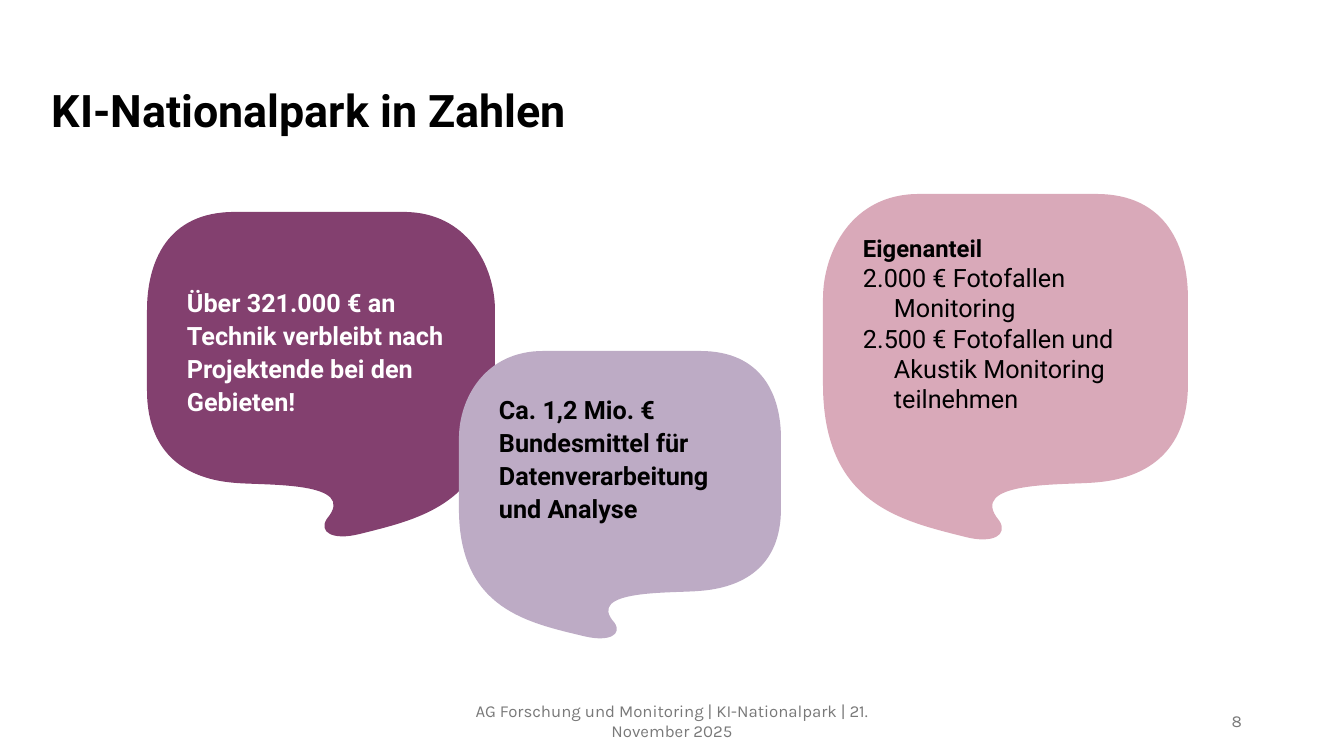
from lxml.etree import SubElement
from pptx import Presentation
from pptx.dml.color import RGBColor
from pptx.enum.text import MSO_ANCHOR, PP_ALIGN
from pptx.oxml.ns import qn
from pptx.util import Pt

PX = 914400 / 100.8
INDENT = 31

# Speech bubble with its tail at the lower left, in thousandths of its width and height
BUBBLE_OUTLINE = [
    ("a:moveTo", [(0, 550)]),
    ("a:cubicBezTo", [(0, 380), (0, 304), (0, 304)]),
    ("a:cubicBezTo", [(0, 167), (80, 0), (262, 0)]),
    ("a:lnTo", [(749, 0)]),
    ("a:cubicBezTo", [(942, 0), (1000, 155), (1000, 304)]),
    ("a:lnTo", [(1000, 550)]),
    ("a:cubicBezTo", [(1000, 757), (876, 825), (749, 836)]),
    ("a:cubicBezTo", [(660, 845), (390, 830), (483, 947)]),
    ("a:cubicBezTo", [(508, 988), (467, 1015), (389, 994)]),
    ("a:cubicBezTo", [(215, 947), (0, 900), (0, 550)]),
    ("a:close", []),
]


def px(length):
    return round(length * PX)


def rgb(color):
    return RGBColor.from_string(color)


presentation = Presentation()
presentation.slide_width = px(1344)
presentation.slide_height = px(756)
slide = presentation.slides.add_slide(presentation.slide_layouts[6])

TOP, MIDDLE, BOTTOM = MSO_ANCHOR.TOP, MSO_ANCHOR.MIDDLE, MSO_ANCHOR.BOTTOM
LEFT, CENTER, RIGHT = PP_ALIGN.LEFT, PP_ALIGN.CENTER, PP_ALIGN.RIGHT

# Box, bubble fill, tail at the right, anchor, alignment, line spacing, hanging indent,
# font, text colour, and paragraphs of text, size and bold
parts = [
    ((42, 40, 1026, 146), None, False, MIDDLE, LEFT, 0.9, 0, "Roboto", "000000",
     [("KI-Nationalpark in Zahlen", 32, True)]),
    ((147, 212, 348, 324), "83406F", True, BOTTOM, LEFT, 1.1, 0, "Roboto", "FFFFFF",
     [("Über 321.000 € an Technik verbleibt nach Projektende bei den Gebieten!", 18, True)]),
    ((950, 701, 302, 40), None, False, MIDDLE, RIGHT, 1.0, 0, "Karla", "797979",
     [("8", 12, False)]),
    ((445, 701, 454, 40), None, False, MIDDLE, CENTER, 1.0, 0, "Karla", "797979",
     [("AG Forschung und Monitoring | KI-Nationalpark | 21. November 2025", 12, False)]),
    ((459, 351, 322, 287), "BDABC5", False, TOP, LEFT, 1.1, 0, "Roboto", "000000",
     [("Ca. 1,2 Mio. € Bundesmittel für Datenverarbeitung und Analyse", 18, True)]),
    ((823, 194, 365, 345), "D9A9B9", False, TOP, LEFT, 1.0, INDENT, "Roboto", "000000",
     [("Eigenanteil", 17, True),
      ("2.000 € Fotofallen Monitoring", 18, False),
      ("2.500 € Fotofallen und Akustik Monitoring teilnehmen", 18, False)]),
]
for (box, fill, mirrored, anchor, alignment, line_spacing, indent,
     font_name, color, paragraphs) in parts:
    left, top, width, height = map(px, box)
    if fill:
        builder = slide.shapes.build_freeform(left, top)
        builder.add_line_segments([(left + width, top + height)])
        shape = builder.convert_to_shape()
        outline = next(shape._element.iter(qn("a:path")))
        for command in list(outline):
            outline.remove(command)
        outline.set("w", "1000")
        outline.set("h", "1000")
        for tag, points in BUBBLE_OUTLINE:
            command = SubElement(outline, qn(tag))
            for x, y in points:
                SubElement(command, qn("a:pt"), x=str(1000 - x if mirrored else x), y=str(y))
        shape.shadow.inherit = False
        shape.fill.solid()
        shape.fill.fore_color.rgb = rgb(fill)
        shape.line.fill.background()
    else:
        shape = slide.shapes.add_textbox(left, top, width, height)

    text_frame = shape.text_frame
    text_frame.word_wrap = True
    text_frame.vertical_anchor = anchor
    if fill:
        text_frame.margin_left = text_frame.margin_right = text_frame.margin_top = px(40)
        text_frame.margin_bottom = px(119)
    text_frame.text = "\n".join(text for text, size, bold in paragraphs)
    for paragraph, (text, size, bold) in zip(text_frame.paragraphs, paragraphs):
        paragraph.alignment = alignment
        paragraph.line_spacing = line_spacing
        if indent:
            properties = paragraph._p.get_or_add_pPr()
            properties.set("marL", str(px(indent)))
            properties.set("indent", str(-px(indent)))
        font = paragraph.runs[0].font
        font.name, font.size, font.bold = font_name, Pt(size), bold
        font.color.rgb = rgb(color)

presentation.save("out.pptx")
